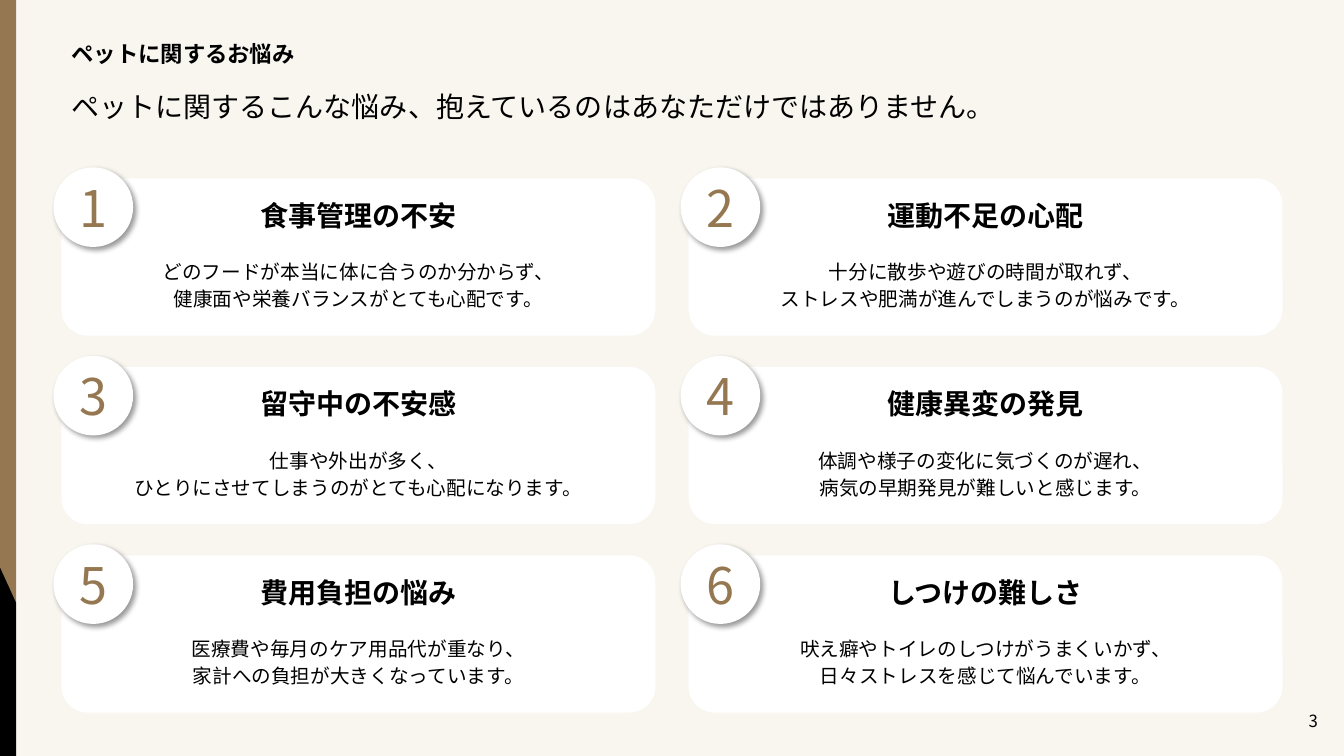
from lxml import etree
from pptx import Presentation
from pptx import util as u
from pptx.dml.color import RGBColor
from pptx.enum import shapes, text
from pptx.oxml import ns

FONT = "Noto Sans CJK JP"
CREAM = RGBColor(0xF9, 0xF6, 0xF0)
BROWN = RGBColor(0x95, 0x78, 0x51)
WHITE = RGBColor(0xFF, 0xFF, 0xFF)
BLACK = RGBColor(0, 0, 0)

WIDTH, HEIGHT = 13.33, 7.5
MARGIN = 0.61
CONTENT_WIDTH = 12.11
COLUMNS = 2
CARD_WIDTH, CARD_HEIGHT = 5.89, 1.56
CARD_TOP = 1.77
COLUMN_STEP = CARD_WIDTH + 0.33
ROW_STEP = CARD_HEIGHT + 0.31
BADGE_SIZE = 0.79

CENTER = text.PP_ALIGN.CENTER
LEFT = text.PP_ALIGN.LEFT
RIGHT = text.PP_ALIGN.RIGHT
MIDDLE = text.MSO_ANCHOR.MIDDLE
TOP = text.MSO_ANCHOR.TOP

WORRIES = [
    ("食事管理の不安", "どのフードが本当に体に合うのか分からず、\n健康面や栄養バランスがとても心配です。"),
    ("運動不足の心配", "十分に散歩や遊びの時間が取れず、\nストレスや肥満が進んでしまうのが悩みです。"),
    ("留守中の不安感", "仕事や外出が多く、\nひとりにさせてしまうのがとても心配になります。"),
    ("健康異変の発見", "体調や様子の変化に気づくのが遅れ、\n病気の早期発見が難しいと感じます。"),
    ("費用負担の悩み", "医療費や毎月のケア用品代が重なり、\n家計への負担が大きくなっています。"),
    ("しつけの難しさ", "吠え癖やトイレのしつけがうまくいかず、\n日々ストレスを感じて悩んでいます。"),
]


def inches(*lengths):
    return [u.Inches(length) for length in lengths]


def write(shape, content, size, align=LEFT, color=BLACK, bold=False,
          anchor=MIDDLE, insets=(0.1, 0.05, 0.1, 0.05)):
    frame = shape.text_frame
    frame.text = content
    frame.word_wrap = True
    frame.vertical_anchor = anchor
    (frame.margin_left, frame.margin_top,
     frame.margin_right, frame.margin_bottom) = inches(*insets)
    for index, paragraph in enumerate(frame.paragraphs):
        paragraph.alignment = align
        if index:
            paragraph.space_before = u.Pt(2.6)
        for run in paragraph.runs:
            run.font.size = u.Pt(size)
            run.font.bold = bold
            run.font.color.rgb = color
            run.font.name = FONT
            east_asian = etree.SubElement(run.font._element, ns.qn("a:ea"))
            east_asian.set("typeface", FONT)


def add_text(slide, box, content, size, **style):
    write(slide.shapes.add_textbox(*inches(*box)), content, size, **style)


def add_block(parent, kind, box, color):
    shape = parent.shapes.add_shape(kind, *inches(*box))
    shape.shadow.inherit = False
    shape.fill.solid()
    shape.fill.fore_color.rgb = color
    shape.line.fill.background()
    return shape


def add_soft_shadow(shape):
    effects = shape._element.spPr.find(ns.qn("a:effectLst"))
    shadow = etree.SubElement(
        effects, ns.qn("a:outerShdw"), blurRad=str(u.Pt(4)), dist=str(u.Pt(3)),
        dir=str(45 * 60000), algn="tl", rotWithShape="0")
    color = etree.SubElement(shadow, ns.qn("a:srgbClr"), val=str(BLACK))
    etree.SubElement(color, ns.qn("a:alpha"), val="40000")


def add_ribbon(slide, left, top, width, height):
    split = top + 5.98
    slant = 0.35
    ribbon = slide.shapes.add_group_shape()
    rectangle = shapes.MSO_SHAPE.RECTANGLE
    add_block(ribbon, rectangle, (left, top, width, split - top), BROWN)
    add_block(ribbon, rectangle, (left, split, width, top + height - split), BLACK)
    add_block(ribbon, shapes.MSO_SHAPE.RIGHT_TRIANGLE,
              (left, split - slant, width, slant), BLACK)


def add_heading(slide, left, top, width):
    line_height = 0.54
    add_text(slide, (left, top, width, line_height), "ペットに関するお悩み", 16, bold=True)
    add_text(slide, (left, top + 0.52, width, line_height),
             "ペットに関するこんな悩み、抱えているのはあなただけではありません。", 20)


def add_worry_card(slide, left, top, width, height, number, title, body):
    card = add_block(slide, shapes.MSO_SHAPE.ROUNDED_RECTANGLE,
                     (left, top, width, height), WHITE)
    write(card, title, 20, align=CENTER, bold=True, anchor=TOP,
          insets=(0.1, 0.12, 0.1, 0.05))
    add_text(slide, (left, top + 0.72, width, 0.68), body, 14, align=CENTER)
    badge = add_block(slide, shapes.MSO_SHAPE.OVAL,
                      (left - 0.08, top - 0.11, BADGE_SIZE, BADGE_SIZE), WHITE)
    add_soft_shadow(badge)
    write(badge, str(number), 36, align=CENTER, color=BROWN, insets=(0, 0, 0, 0))


def add_worry_grid(slide, left, top):
    for index, (title, body) in enumerate(WORRIES):
        row, column = divmod(index, COLUMNS)
        add_worry_card(slide, left + column * COLUMN_STEP, top + row * ROW_STEP,
                       CARD_WIDTH, CARD_HEIGHT, index + 1, title, body)


def main():
    presentation = Presentation()
    presentation.slide_width, presentation.slide_height = inches(WIDTH, HEIGHT)
    slide = presentation.slides.add_slide(presentation.slide_layouts[6])
    add_block(slide, shapes.MSO_SHAPE.RECTANGLE, (0, 0, WIDTH, HEIGHT), CREAM)
    add_text(slide, (12.68, 6.95, 0.49, 0.4), "3", 12, align=RIGHT)
    add_heading(slide, MARGIN, 0.26, CONTENT_WIDTH)
    add_ribbon(slide, 0, 0, 0.16, HEIGHT)
    add_worry_grid(slide, MARGIN, CARD_TOP)
    presentation.save("out.pptx")


if __name__ == "__main__":
    main()
